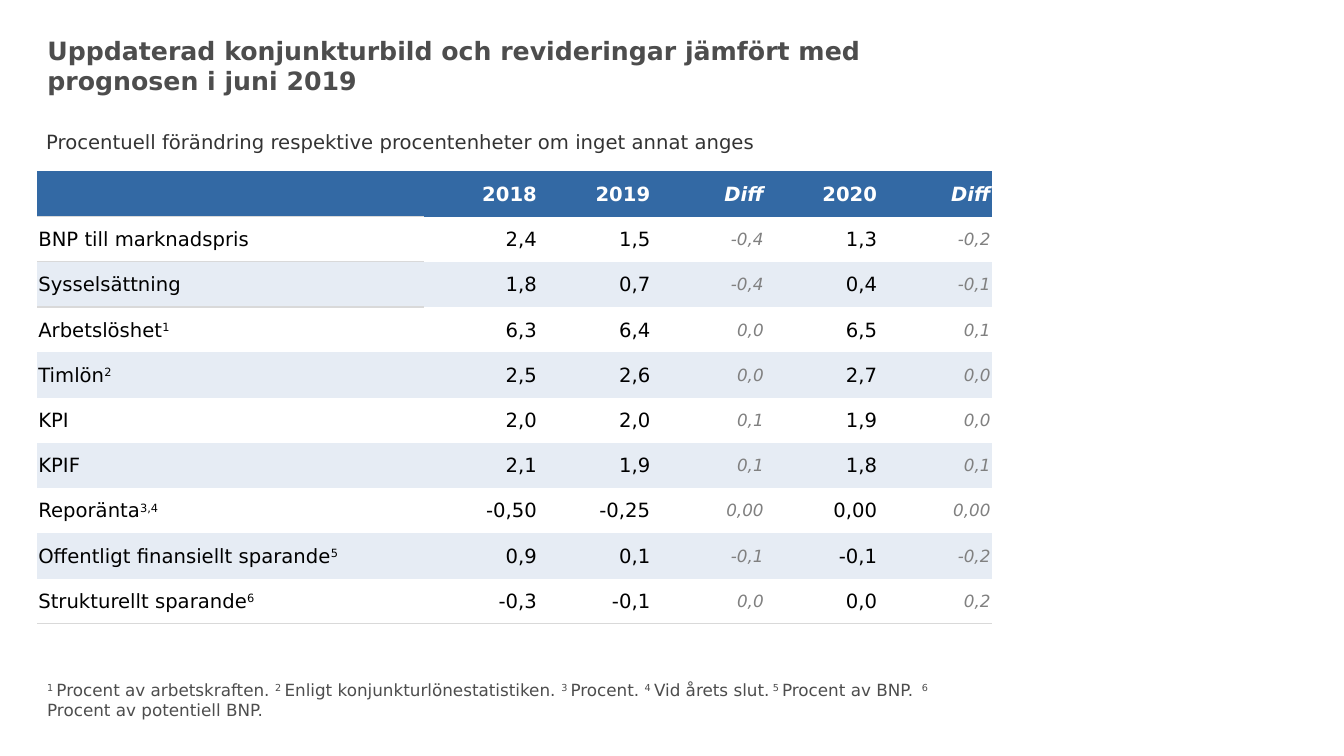
import pptx
import pptx.dml.color
import pptx.enum.text
import pptx.oxml.ns
import pptx.util
from lxml import etree
from pptx.util import Inches

COLORS = {
    "header": "3369A4",
    "band": "E6ECF4",
    "rule": "D9D9D9",
    "heading": "4D4D4D",
    "subtitle": "333333",
    "body": "000000",
    "diff": "808080",
    "white": "FFFFFF",
}
FONT = "DejaVu Sans"
NO_GRID_STYLE = "{2D5ABB26-0587-4C30-8999-92F81FD0307C}"
ALIGN = pptx.enum.text.PP_ALIGN
ANCHOR = pptx.enum.text.MSO_ANCHOR

HEADER = ["", "2018", "2019", "Diff", "2020", "Diff"]
FORECAST = [
    ["BNP till marknadspris", "2,4", "1,5", "-0,4", "1,3", "-0,2"],
    ["Sysselsättning", "1,8", "0,7", "-0,4", "0,4", "-0,1"],
    ["Arbetslöshet^1", "6,3", "6,4", "0,0", "6,5", "0,1"],
    ["Timlön^2", "2,5", "2,6", "0,0", "2,7", "0,0"],
    ["KPI", "2,0", "2,0", "0,1", "1,9", "0,0"],
    ["KPIF", "2,1", "1,9", "0,1", "1,8", "0,1"],
    ["Reporänta^3,4", "-0,50", "-0,25", "0,00", "0,00", "0,00"],
    ["Offentligt finansiellt sparande^5", "0,9", "0,1", "-0,1", "-0,1", "-0,2"],
    ["Strukturellt sparande^6", "-0,3", "-0,1", "0,0", "0,0", "0,2"],
]
FOOTNOTE = (
    "^1 ^Procent av arbetskraften. ^2 ^Enligt konjunkturlönestatistiken. "
    "^3 ^Procent. ^4 ^Vid årets slut.^ 5 ^Procent av BNP. "
    "^ 6 ^Procent av potentiell BNP."
)


def rgb(name):
    return pptx.dml.color.RGBColor.from_string(COLORS[name])


def write_text(frame, text, size=14, color="body", bold=False, italic=False, align=ALIGN.LEFT):
    paragraph = frame.paragraphs[0]
    paragraph.alignment = align
    paragraph.space_before = pptx.util.Pt(0)
    for index, part in enumerate(text.split("^")):
        if not part:
            continue
        run = paragraph.add_run()
        run.text = part
        run.font.name = FONT
        run.font.size = pptx.util.Pt(size)
        run.font.bold = bold
        run.font.italic = italic
        run.font.color.rgb = rgb(color)
        if index % 2:
            run._r.get_or_add_rPr().set("baseline", "30000")


class ForecastSlide:
    def __init__(self, presentation):
        self.slide = presentation.slides.add_slide(presentation.slide_layouts[5])

    def place(self, shape, left, top, width, height, anchor):
        shape.left, shape.top = Inches(left), Inches(top)
        shape.width, shape.height = Inches(width), Inches(height)
        frame = shape.text_frame
        frame.word_wrap = True
        frame.auto_size = pptx.enum.text.MSO_AUTO_SIZE.NONE
        frame.vertical_anchor = anchor
        return frame

    def title(self, text, box, **style):
        write_text(self.place(self.slide.shapes.title, *box, ANCHOR.TOP), text, **style)

    def text(self, text, box, anchor=ANCHOR.TOP, **style):
        shape = self.slide.shapes.add_textbox(*map(Inches, box))
        write_text(self.place(shape, *box, anchor), text, **style)

    def border(self, cell, side):
        properties = cell._tc.get_or_add_tcPr()
        qualify = pptx.oxml.ns.qn
        line = etree.SubElement(properties, qualify(f"a:ln{side}"), w=str(pptx.util.Pt(1)))
        fill = etree.SubElement(line, qualify("a:solidFill"))
        etree.SubElement(fill, qualify("a:srgbClr"), val=COLORS["rule"])

    def cell(self, cell, text, fill, sides, **style):
        cell.margin_left = cell.margin_right = cell.margin_top = Inches(0.01)
        cell.margin_bottom = 0
        cell.vertical_anchor = ANCHOR.MIDDLE
        for side in sides:
            self.border(cell, side)
        if fill:
            cell.fill.solid()
            cell.fill.fore_color.rgb = rgb(fill)
        else:
            cell.fill.background()
        write_text(cell.text_frame, text, **style)

    def table(self, rows, box, column_widths):
        frame = self.slide.shapes.add_table(len(rows), len(column_widths), *map(Inches, box))
        table = frame.table
        table.first_row = table.horz_banding = False
        table._tbl.tblPr.find(pptx.oxml.ns.qn("a:tableStyleId")).text = NO_GRID_STYLE
        for column, width in zip(table.columns, column_widths):
            column.width = Inches(width)
        last = len(rows) - 1
        first_column_sides = {0: "B", 1: "TB", 2: "T"}
        for row, values in enumerate(rows):
            table.rows[row].height = Inches(box[3] / len(rows))
            for column, value in enumerate(values):
                is_header, is_diff = row == 0, HEADER[column] == "Diff"
                sides = "B" if row == last else ""
                if column == 0:
                    sides = first_column_sides.get(row, sides)
                self.cell(
                    table.cell(row, column),
                    value,
                    fill="header" if is_header else "band" if row % 2 == 0 else None,
                    sides=sides,
                    size=12 if is_diff and not is_header else 14,
                    color="white" if is_header else "diff" if is_diff else "body",
                    bold=is_header,
                    italic=is_diff,
                    align=ALIGN.RIGHT if column else ALIGN.LEFT,
                )


def main():
    presentation = pptx.Presentation()
    presentation.slide_width, presentation.slide_height = Inches(13.33), Inches(7.5)
    forecast = ForecastSlide(presentation)
    forecast.title(
        "Uppdaterad konjunkturbild och revideringar jämfört med prognosen i juni 2019",
        (0.37, 0.3, 9.47, 0.77), size=18, color="heading", bold=True,
    )
    forecast.table([HEADER] + FORECAST, (0.37, 1.7, 9.47, 4.49), [3.84] + [1.125] * 5)
    forecast.text(
        "Procentuell förändring respektive procentenheter om inget annat anges",
        (0.36, 1.02, 9.47, 0.55), anchor=ANCHOR.BOTTOM, color="subtitle",
    )
    forecast.text(FOOTNOTE, (0.37, 6.69, 9.47, 0.68), size=12, color="heading")
    presentation.save("out.pptx")


if __name__ == "__main__":
    main()
